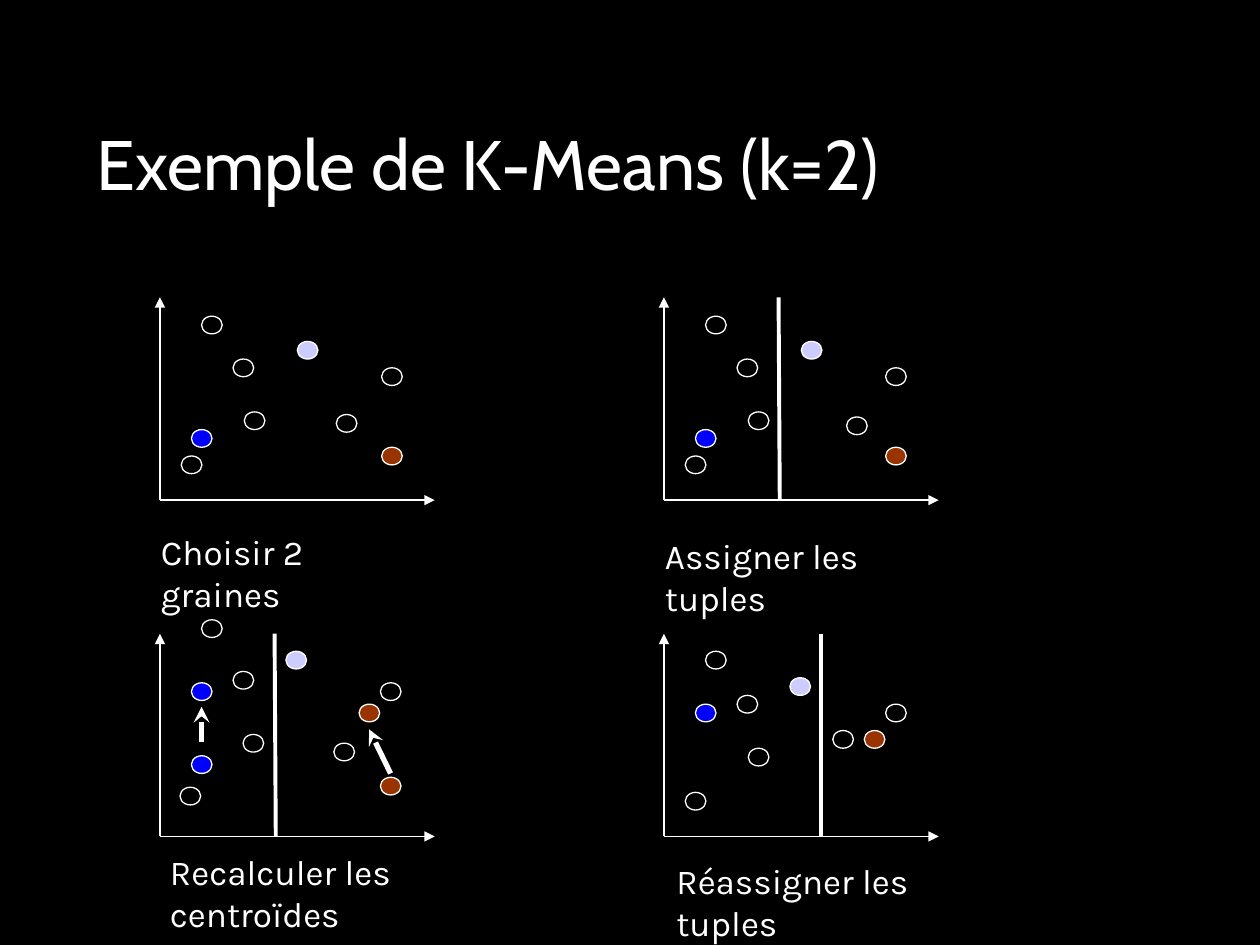
import pptx
import pptx.util
import pptx.dml.color
import pptx.enum.shapes
import pptx.enum.text
import pptx.oxml
import pptx.oxml.ns
from lxml import etree

Pt = pptx.util.Pt
RGBColor = pptx.dml.color.RGBColor
WHITE = RGBColor(0xFF, 0xFF, 0xFF)
BLACK = RGBColor(0x00, 0x00, 0x00)
BLUE = RGBColor(0x00, 0x00, 0xFF)
BROWN = RGBColor(0x99, 0x33, 0x00)
LAVENDER = RGBColor(0xCC, 0xCC, 0xFF)

# Content: positions are relative to the top of each vertical axis
TITLE = "Exemple de K-Means (k=2)"
STEPS = [
    {"caption": ("Choisir 2 graines", -6.5, 129.6, 151.2),
     "tuples": [(12.2, 90.7), (48.2, 65.5), (23.8, 10.8), (100.8, 67),
                (126.7, 40.3), (41.8, 35.3)],
     "seeds": [(78.5, 25.2, LAVENDER), (18, 75.6, BLUE), (126.7, 85.7, BROWN)]},
    {"caption": ("Assigner les tuples", -6.5, 131.8, 165.6),
     "tuples": [(12.2, 90.7), (48.2, 65.5), (23.8, 10.8), (104.4, 68.4),
                (126.7, 40.3), (41.8, 35.3)],
     "seeds": [(78.5, 25.2, LAVENDER), (18, 75.6, BLUE), (126.7, 85.7, BROWN)],
     "boundary": (65.5, 66.2)},
    {"caption": ("Recalculer les centroïdes", -1.4, 120.2, 213.8),
     "tuples": [(11.5, 87.8), (47.5, 57.6), (23.8, -7.9), (99.4, 62.6),
                (126, 28.1), (41.8, 21.6)],
     "seeds": [(72, 10.1, LAVENDER), (18, 69.8, BLUE), (126, 82.1, BROWN),
               (18, 28.1, BLUE), (113.8, 40.3, BROWN)],
     "boundary": (65.5, 66.2),
     "moves": [(23.8, 61.9, 23.8, 41.8), (131.8, 79.9, 119.5, 54.7)]},
    {"caption": ("Réassigner les tuples", 0, 125.3, 182.2),
     "tuples": [(12.2, 90.7), (48.2, 65.5), (23.8, 10.1), (96.5, 55.4),
                (126.7, 40.3), (41.8, 35.3)],
     "seeds": [(72, 25.2, LAVENDER), (18, 40.3, BLUE), (114.5, 55.4, BROWN)],
     "boundary": (90, 90)},
]

# Layout
GRID_LEFT, GRID_TOP = 91.4, 169.9
COLUMN_STEP, ROW_STEP = 288, 192.2
AXIS_WIDTH, AXIS_HEIGHT = 157, 115.9
DOT_WIDTH, DOT_HEIGHT = 11.8, 10.1
CAPTION_HEIGHT = 31

# Formats
TITLE_FONT = {"name": "Cabin", "size": Pt(40), "bold": False}
CAPTION_FONT = {"name": "Karla", "size": Pt(20)}
TITLE_BOX = {"left": Pt(48.2), "top": Pt(30.2), "width": Pt(623.5), "height": Pt(90)}
TITLE_FRAME = {"word_wrap": True,
               "vertical_anchor": pptx.enum.text.MSO_ANCHOR.BOTTOM,
               "auto_size": pptx.enum.text.MSO_AUTO_SIZE.NONE}
TITLE_PARAGRAPH = {"alignment": pptx.enum.text.PP_ALIGN.LEFT, "line_spacing": 0.8}


def apply(target, values):
    for name, value in values.items():
        setattr(target, name, value)


def write(paragraph, text, font):
    run = paragraph.add_run()
    run.text = text
    apply(run.font, font)
    run.font.color.rgb = WHITE


def add_line(slide, x1, y1, x2, y2, width=0.75, arrowhead=None):
    line = slide.shapes.add_connector(
        pptx.enum.shapes.MSO_CONNECTOR.STRAIGHT, Pt(x1), Pt(y1), Pt(x2), Pt(y2))
    line.line.color.rgb = WHITE
    line.line.width = Pt(width)
    properties = line._element.spPr
    if arrowhead:
        outline = line.line._get_or_add_ln()
        etree.SubElement(outline, pptx.oxml.ns.qn("a:tailEnd"), type=arrowhead)
    etree.SubElement(properties, pptx.oxml.ns.qn("a:effectLst"))


def add_dot(slide, x, y, color=None):
    dot = slide.shapes.add_shape(pptx.enum.shapes.MSO_SHAPE.OVAL,
                                 Pt(x), Pt(y), Pt(DOT_WIDTH), Pt(DOT_HEIGHT))
    dot.shadow.inherit = False
    dot.line.color.rgb = WHITE
    dot.line.width = Pt(0.75)
    if color is None:
        dot.fill.background()
    else:
        dot.fill.solid()
        dot.fill.fore_color.rgb = color


def add_step(slide, step, left, top):
    # Axes
    bottom = top + AXIS_HEIGHT
    add_line(slide, left, bottom, left, top, arrowhead="triangle")
    add_line(slide, left, bottom, left + AXIS_WIDTH, bottom, arrowhead="triangle")

    # Tuples and seeds
    for x, y, *color in step["tuples"] + step["seeds"]:
        add_dot(slide, left + x, top + y, *color)

    # Cluster boundary and centroid moves
    if "boundary" in step:
        upper, lower = step["boundary"]
        add_line(slide, left + upper, top, left + lower, bottom, 2.25)
    for x1, y1, x2, y2 in step.get("moves", []):
        add_line(slide, left + x1, top + y1, left + x2, top + y2, 3, "stealth")

    # Caption
    text, x, y, width = step["caption"]
    caption = slide.shapes.add_textbox(Pt(left + x), Pt(top + y),
                                       Pt(width), Pt(CAPTION_HEIGHT))
    caption.text_frame.word_wrap = True
    write(caption.text_frame.paragraphs[0], text, CAPTION_FONT)


def main():
    deck = pptx.Presentation()
    deck.slide_width, deck.slide_height = Pt(720), Pt(540)
    slide = deck.slides.add_slide(deck.slide_layouts[5])
    slide.background.fill.solid()
    slide.background.fill.fore_color.rgb = BLACK

    # Title
    title = slide.shapes.title
    apply(title, TITLE_BOX)
    apply(title.text_frame, TITLE_FRAME)
    heading = title.text_frame.paragraphs[0]
    apply(heading, TITLE_PARAGRAPH)
    write(heading, TITLE, TITLE_FONT)

    # Four steps in a two by two grid
    for index, step in enumerate(STEPS):
        row, column = divmod(index, 2)
        add_step(slide, step, GRID_LEFT + column * COLUMN_STEP,
                 GRID_TOP + row * ROW_STEP)

    deck.save("out.pptx")


if __name__ == "__main__":
    main()
